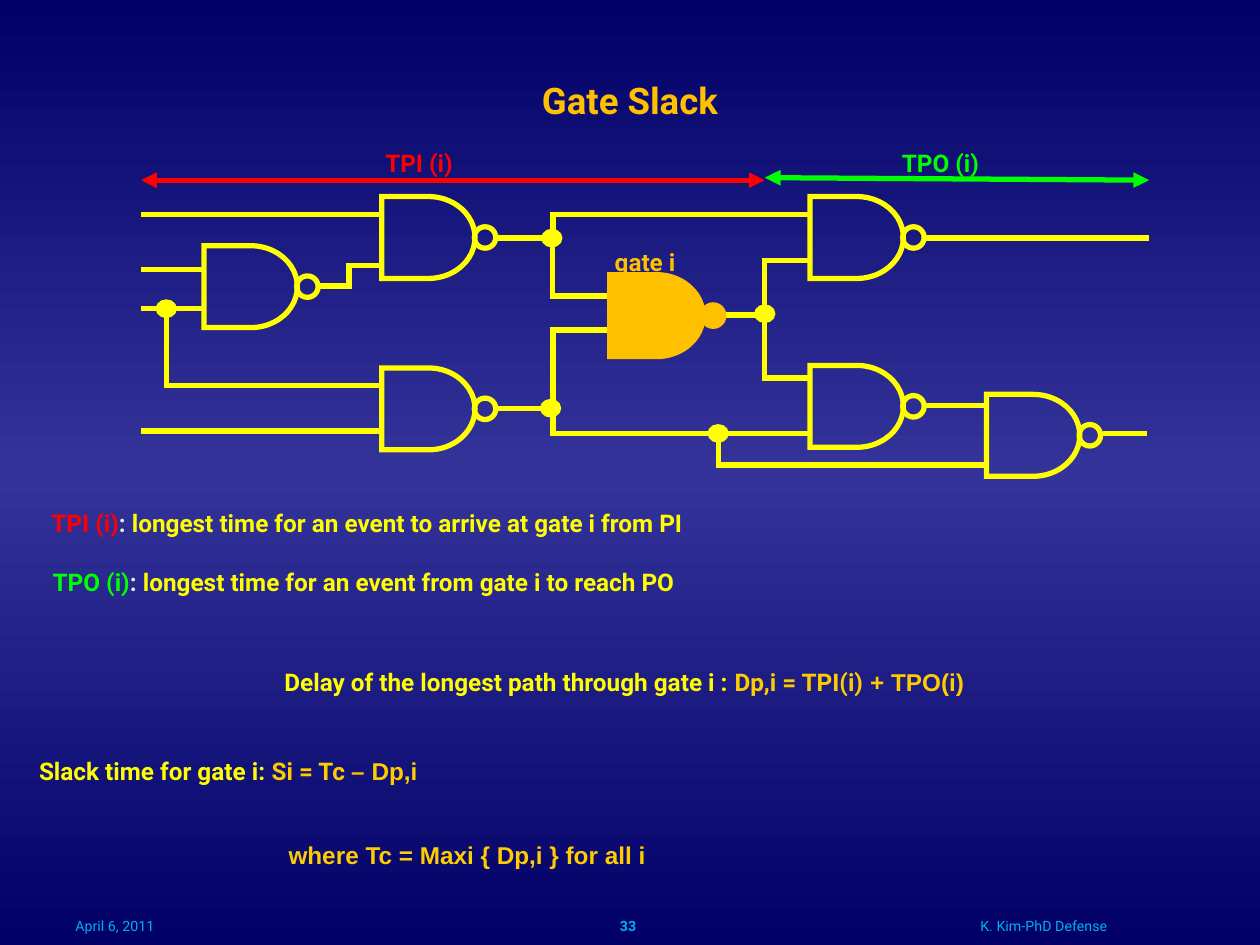
"""Build the Gate Slack slide: a NAND network with its timing definitions."""
import copy
from dataclasses import dataclass

import pptx
import pptx.dml.color
import pptx.enum.shapes
import pptx.enum.text
import pptx.oxml
import pptx.oxml.ns
import pptx.util

COLORS = {
    "navy": "000066", "indigo": "333399", "yellow": "FFFF00", "amber": "FFC000",
    "gold": "FFCC00", "red": "FF0000", "green": "00FF00", "sky": "00B0F0", "pale": "DAEDEF",
}
CELL = pptx.util.Inches(10) // 100
SHAPES = pptx.enum.shapes.MSO_SHAPE
LINES = pptx.enum.shapes.MSO_CONNECTOR
ALIGN = pptx.enum.text.PP_ALIGN
ANCHOR = pptx.enum.text.MSO_ANCHOR


@dataclass
class Span:
    text: str
    color: str
    font: str = "Roboto"
    bold: bool = True


@dataclass
class Label:
    column: float
    row: float
    columns: float
    rows: float
    spans: list[Span]
    size: int = 24
    align: ALIGN = ALIGN.LEFT


@dataclass
class Gate:
    column: float
    row: float
    color: str = "yellow"
    filled: bool = False


@dataclass
class Wire:
    start: tuple[float, float]
    end: tuple[float, float]
    bend: float | None = None
    color: str = "yellow"
    arrows: bool = False


TPI = Span("TPI (i)", "red")
TPO = Span("TPO (i)", "green")
COLON = Span(": ", "pale")

LABELS = [
    Label(1.4, 50.2, 96.3, 5, [
        Span("Delay of the longest path through gate i : ", "yellow"),
        Span("Dp,i = TPI(i)", "gold"), Span(" + TPO(i)", "gold", "Arial")], align=ALIGN.CENTER),
    Label(5, 71, 23.3, 5.2, [Span("April 6, 2011", "sky", bold=False)], 14),
    Label(67, 71, 31.7, 5.2, [Span("K. Kim-PhD Defense", "sky", bold=False)], 14, ALIGN.CENTER),
    Label(38.2, 71, 23.3, 5.2, [Span("33", "sky")], 14, ALIGN.CENTER),
    Label(47.8, 16.9, 11.6, 5, [Span("gate i", "amber")]),
    Label(29.6, 9, 10, 5, [TPI]),
    Label(70.6, 9, 12.7, 5, [TPO]),
    Label(3.1, 37.6, 94.7, 5, [
        TPI, COLON, Span("longest time for an event to arrive at gate i from PI", "yellow")]),
    Label(3.2, 42.3, 92.7, 5, [
        TPO, COLON, Span("longest time for an event from gate i to reach PO", "yellow")]),
]
SLACK = [
    [Span("Slack time for gate i: ", "yellow"), Span("Si = Tc ", "gold"),
     Span("– ", "amber", "Arial"), Span("Dp,i", "gold", "Arial")],
    [Span("where Tc = Maxi { Dp,i } for all i", "gold", "Arial")],
]
GATES = [
    Gate(30.3, 15.6), Gate(30.3, 29.2), Gate(64.3, 29), Gate(78.3, 31.3),
    Gate(64.3, 15.6), Gate(16.2, 19.5), Gate(48.4, 21.8, "amber", True),
]
NODES = [(57, 34.4), (13.2, 24.5), (43.7, 32.4), (43.8, 18.9), (60.7, 24.9)]
WIRES = [
    Wire((11.2, 17), (30.3, 17)), Wire((11.2, 21.4), (16.2, 21.4)),
    Wire((11.2, 24.5), (16.2, 24.5)), Wire((11.2, 34.2), (30.3, 34.2)),
    Wire((57.3, 25), (60.7, 25)), Wire((73.3, 18.9), (91.2, 18.9)),
    Wire((73.3, 32.2), (78.3, 32.2)), Wire((87.5, 34.4), (91, 34.4)),
    Wire((25.2, 22.7), (30.2, 21.1), 0.5), Wire((39.3, 18.9), (48.4, 23.5), 0.5),
    Wire((39.4, 32.4), (48.4, 26.2), 0.5), Wire((43.9, 18.9), (64.3, 17), 0),
    Wire((43.9, 32.4), (64.3, 34.4), 0), Wire((13.2, 24.5), (30.3, 30.6), 0),
    Wire((57, 34.5), (78.3, 36.9), 0), Wire((60.7, 25), (64.3, 20.7), 0),
    Wire((60.7, 25), (64.3, 30), 0),
    Wire((11.2, 14.3), (60.7, 14.3), color="red", arrows=True),
    Wire((60.7, 14.1), (91.2, 14.3), color="green", arrows=True),
]


def cells(*counts: float) -> list[int]:
    """Turn grid counts into lengths."""
    return [round(count * CELL) for count in counts]


def rgb(name: str) -> pptx.dml.color.RGBColor:
    """Look up a named colour."""
    return pptx.dml.color.RGBColor.from_string(COLORS[name])


def add_element(parent, tag: str, **attributes: str):
    """Append a DrawingML element with its attributes."""
    child = pptx.oxml.parse_xml(f"<a:{tag} {pptx.oxml.ns.nsdecls('a')}/>")
    for key, value in attributes.items():
        child.set(key, value)
    parent.append(child)
    return child


def style_line(line, color: str, width: float) -> None:
    """Give a line its colour, width and sharp corners."""
    line.color.rgb = rgb(color)
    line.width = pptx.util.Pt(width)
    add_element(line._get_or_add_ln(), "miter", lim="800000")


def write_spans(para, spans: list[Span], size: int, align: ALIGN) -> None:
    """Fill a paragraph with lowered, formatted spans."""
    para.alignment = align
    for item in spans:
        span = para.add_run()
        span.text = item.text
        span.font.name = item.font
        span.font.size = pptx.util.Pt(size)
        span.font.bold = item.bold
        span.font.color.rgb = rgb(item.color)
        span.font._element.set("baseline", "-25000")


def place(box, column: float, row: float, columns: float, rows: float, anchor: ANCHOR) -> None:
    """Move a text holder onto the grid and fix its frame."""
    box.left, box.top, box.width, box.height = cells(column, row, columns, rows)
    frame = box.text_frame
    frame.word_wrap = True
    frame.auto_size = pptx.enum.text.MSO_AUTO_SIZE.NONE
    frame.vertical_anchor = anchor


def draw_label(page, label: Label) -> None:
    """Draw one line of text."""
    box = page.shapes.add_textbox(0, 0, 0, 0)
    place(box, label.column, label.row, label.columns, label.rows, ANCHOR.TOP)
    write_spans(box.text_frame.paragraphs[0], label.spans, label.size, label.align)


def draw_shape(page, kind, area: tuple, color: str, filled: bool, width: float) -> None:
    """Draw one preset shape on the grid."""
    shape = page.shapes.add_shape(kind, *cells(*area))
    shape.shadow.inherit = False
    if filled:
        shape.fill.solid()
        shape.fill.fore_color.rgb = rgb(color)
    else:
        shape.fill.background()
    style_line(shape.line, color, width)


def draw_gate(page, gate: Gate) -> None:
    """Draw a NAND gate as a body and an inverting bubble."""
    body = (gate.column, gate.row, 7.4, 6.5)
    bubble = (gate.column + 7.35, gate.row + 2.4, 1.7, 1.7)
    draw_shape(page, SHAPES.FLOWCHART_DELAY, body, gate.color, gate.filled, 3)
    draw_shape(page, SHAPES.OVAL, bubble, gate.color, gate.filled, 3)


def draw_wire(page, wire: Wire) -> None:
    """Draw a straight or bent connector."""
    kind = LINES.STRAIGHT if wire.bend is None else LINES.ELBOW
    connector = page.shapes.add_connector(kind, *cells(*wire.start, *wire.end))
    style_line(connector.line, wire.color, 3)
    if wire.bend is not None:
        guides = connector._element.spPr.find(f".//{pptx.oxml.ns.qn('a:avLst')}")
        add_element(guides, "gd", name="adj1", fmla=f"val {round(wire.bend * 100000)}")
    if wire.arrows:
        for end in ("headEnd", "tailEnd"):
            add_element(connector.line._get_or_add_ln(), end, type="triangle")
    add_element(connector._element.spPr, "effectLst")


def paint_background(page) -> None:
    """Fill the page with a vertical three-stop gradient."""
    fill = page.background.fill
    fill.gradient()
    fill.gradient_angle = 270
    first = page.element.find(f".//{pptx.oxml.ns.qn('a:gs')}")
    first.addnext(copy.deepcopy(first))
    for stop, color, position in zip(fill.gradient_stops, ("navy", "indigo", "navy"), (0, 0.5, 1)):
        stop.color.rgb = rgb(color)
        stop.position = position


def write_placeholders(page) -> None:
    """Fill the title and the slack definition."""
    title, body = page.placeholders
    place(title, 5, 0, 90, 12.5, ANCHOR.MIDDLE)
    write_spans(title.text_frame.paragraphs[0], [Span("Gate Slack", "amber")], 36, ALIGN.CENTER)
    place(body, 2.1, 57.3, 95.6, 11.1, ANCHOR.TOP)
    frame = body.text_frame
    for para, spans, indent, gap in zip(
            (frame.paragraphs[0], frame.add_paragraph()), SLACK, (0, 19.8), (0, 15)):
        write_spans(para, spans, 24, ALIGN.LEFT)
        para.space_before = pptx.util.Pt(gap)
        properties = para._p.get_or_add_pPr()
        properties.set("marL", str(cells(indent)[0]))
        properties.set("indent", "0")
        add_element(properties, "buNone")


def main() -> None:
    """Compose and save the slide."""
    deck = pptx.Presentation()
    deck.slide_width, deck.slide_height = cells(100, 75)
    page = deck.slides.add_slide(deck.slide_layouts[1])
    paint_background(page)
    write_placeholders(page)
    for draw, items in ((draw_label, LABELS), (draw_wire, WIRES), (draw_gate, GATES)):
        for item in items:
            draw(page, item)
    for column, row in NODES:
        area = (column - 0.7, row - 0.6, 1.4, 1.2)
        draw_shape(page, SHAPES.FLOWCHART_CONNECTOR, area, "yellow", True, 2)
    deck.save("out.pptx")


if __name__ == "__main__":
    main()
